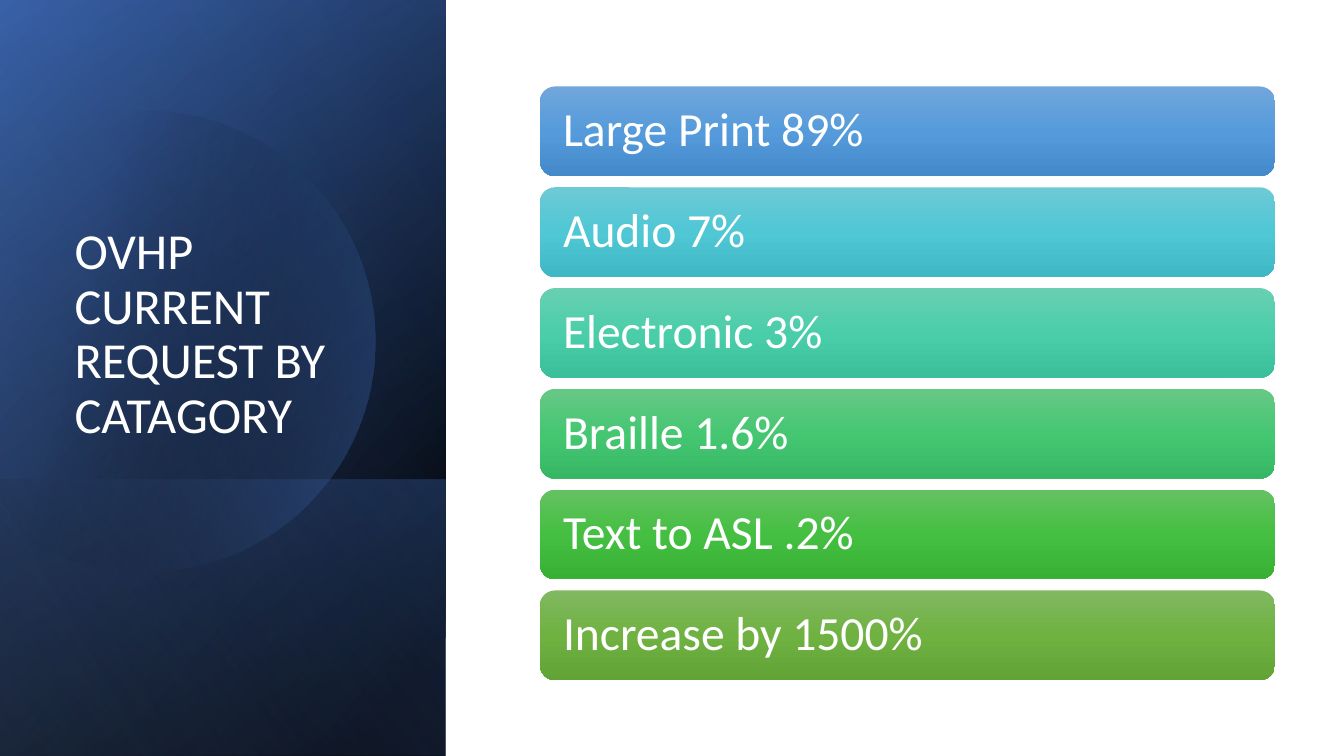
"""Build a slide with a dark title panel and a stack of request-category bars."""
from math import acos, cos, sin

from lxml import etree
from pptx import Presentation
from pptx.dml.color import RGBColor
from pptx.enum.shapes import MSO_SHAPE
from pptx.enum.text import MSO_ANCHOR, PP_ALIGN
from pptx.oxml.ns import qn
from pptx.util import Cm, Pt

RECTANGLE, ROUNDED = MSO_SHAPE.RECTANGLE, MSO_SHAPE.ROUNDED_RECTANGLE
MIDDLE, BOTTOM, LEFT = MSO_ANCHOR.MIDDLE, MSO_ANCHOR.BOTTOM, PP_ALIGN.LEFT

FONT = "Calibri"
WHITE = RGBColor(0xFF, 0xFF, 0xFF)
BLACK = RGBColor(0x00, 0x00, 0x00)
NAVY = RGBColor(0x2F, 0x55, 0x97)
BLUE = RGBColor(0x44, 0x72, 0xC4)
PALE_BLUE = RGBColor(0x8F, 0xAA, 0xDC)
SKY = [RGBColor(0x71, 0xA6, 0xDB), RGBColor(0x55, 0x9B, 0xDB), RGBColor(0x44, 0x8A, 0xCA)]
TURQUOISE = [RGBColor(0x6D, 0xCA, 0xD5), RGBColor(0x4F, 0xC7, 0xD5), RGBColor(0x3F, 0xB7, 0xC4)]
MINT = [RGBColor(0x69, 0xCF, 0xB1), RGBColor(0x4A, 0xCE, 0xAA), RGBColor(0x3B, 0xBE, 0x9A)]
EMERALD = [RGBColor(0x66, 0xC8, 0x85), RGBColor(0x45, 0xC7, 0x72), RGBColor(0x37, 0xB7, 0x64)]
GREEN = [RGBColor(0x64, 0xC1, 0x62), RGBColor(0x44, 0xBF, 0x41), RGBColor(0x37, 0xB0, 0x34)]
OLIVE = [RGBColor(0x81, 0xB8, 0x61), RGBColor(0x6F, 0xB2, 0x42), RGBColor(0x62, 0xA3, 0x36)]

TITLE = "OVHP CURRENT REQUEST BY CATAGORY"
CATEGORIES = [
    ("Large Print 89%", SKY),
    ("Audio 7%", TURQUOISE),
    ("Electronic 3%", MINT),
    ("Braille 1.6%", EMERALD),
    ("Text to ASL .2%", GREEN),
    ("Increase by 1500%", OLIVE),
]

SLIDE_W, SLIDE_H = Cm(33.87), Cm(19.05)
PANEL_W = Cm(11.23)
LOWER_H = Cm(6.96)
BACK_LAYERS = [
    (SLIDE_H, [(8, BLACK, 100), (100, NAVY, 100)], 50),
    (SLIDE_H, [(0, BLACK, 0), (99, BLUE, 46)], 30),
    (LOWER_H, [(2, BLUE, 29), (100, BLACK, 30)], 130),
]
FRONT_LAYER = (SLIDE_H, [(0, BLACK, 0), (99, PALE_BLUE, 11)], 120)
DISC_STOPS, DISC_ANGLE = [(29, BLACK, 0), (100, BLUE, 43)], 14
DISC_X, DISC_Y, DISC_RADIUS, DISC_CUT = Cm(3.65), Cm(8.6), Cm(5.81), Cm(-0.38)
DISC_STEPS = 120
BAR_LEFT, BAR_TOP, BAR_W, BAR_H = Cm(13.61), Cm(2.18), Cm(18.52), Cm(2.26)
BAR_PITCH = Cm(2.54)
BAR_INSET = Cm(0.47)


def paint(shape, stops, angle):
    """Fill a shape with (position, colour, opacity) stops; angle runs clockwise."""
    shape.shadow.inherit = False
    shape.line.fill.background()
    shape.fill.gradient()
    shape.fill.gradient_angle = 360 - angle
    stop_list = shape._element.spPr.find(qn("a:gradFill")).find(qn("a:gsLst"))
    for old_stop in list(stop_list):
        stop_list.remove(old_stop)
    for position, color, opacity in stops:
        stop = etree.SubElement(stop_list, qn("a:gs"), pos=str(position * 1000))
        tint = etree.SubElement(stop, qn("a:srgbClr"), val=str(color))
        if opacity < 100:
            etree.SubElement(tint, qn("a:alpha"), val=str(opacity * 1000))


def write(shape, text, size, anchor):
    """Set one left-aligned white paragraph."""
    frame = shape.text_frame
    frame.text = text
    frame.word_wrap = True
    frame.vertical_anchor = anchor
    paragraph = frame.paragraphs[0]
    paragraph.alignment = LEFT
    paragraph.line_spacing = 0.9
    font = paragraph.runs[0].font
    font.name, font.size, font.color.rgb = FONT, Pt(size), WHITE


def add_layer(shapes, height, stops, angle):
    """Add a mirrored, quarter-turned rectangle resting on the slide bottom."""
    left = (PANEL_W - height) // 2
    top = SLIDE_H - (height + PANEL_W) // 2
    layer = shapes.add_shape(RECTANGLE, left, top, height, PANEL_W)
    layer.rotation = 90
    layer._element.spPr.xfrm.set("flipH", "1")
    paint(layer, stops, angle)


def add_disc(shapes):
    """Add the circle whose left side is cut off by a vertical line."""
    reach = acos((DISC_CUT - DISC_X) / DISC_RADIUS)
    angles = [reach * (2 * step / DISC_STEPS - 1) for step in range(DISC_STEPS + 1)]
    rim = [(DISC_X + DISC_RADIUS * cos(a), DISC_Y + DISC_RADIUS * sin(a)) for a in angles]
    outline = shapes.build_freeform(*rim[0])
    outline.add_line_segments(rim[1:], close=True)
    paint(outline.convert_to_shape(), DISC_STOPS, DISC_ANGLE)


def main():
    """Assemble and save the slide."""
    deck = Presentation()
    deck.slide_width, deck.slide_height = SLIDE_W, SLIDE_H
    shapes = deck.slides.add_slide(deck.slide_layouts[6]).shapes

    for layer in BACK_LAYERS:
        add_layer(shapes, *layer)
    add_disc(shapes)
    add_layer(shapes, *FRONT_LAYER)

    title = shapes.add_textbox(Cm(1.63), Cm(4.67), Cm(8.66), Cm(6.65))
    write(title, TITLE, 36, BOTTOM)

    for row, (label, colors) in enumerate(CATEGORIES):
        bar = shapes.add_shape(ROUNDED, BAR_LEFT, BAR_TOP + row * BAR_PITCH, BAR_W, BAR_H)
        paint(bar, [(50 * i, color, 100) for i, color in enumerate(colors)], 90)
        write(bar, label, 34, MIDDLE)
        bar.text_frame.margin_left = bar.text_frame.margin_right = BAR_INSET

    deck.save("out.pptx")


if __name__ == "__main__":
    main()
